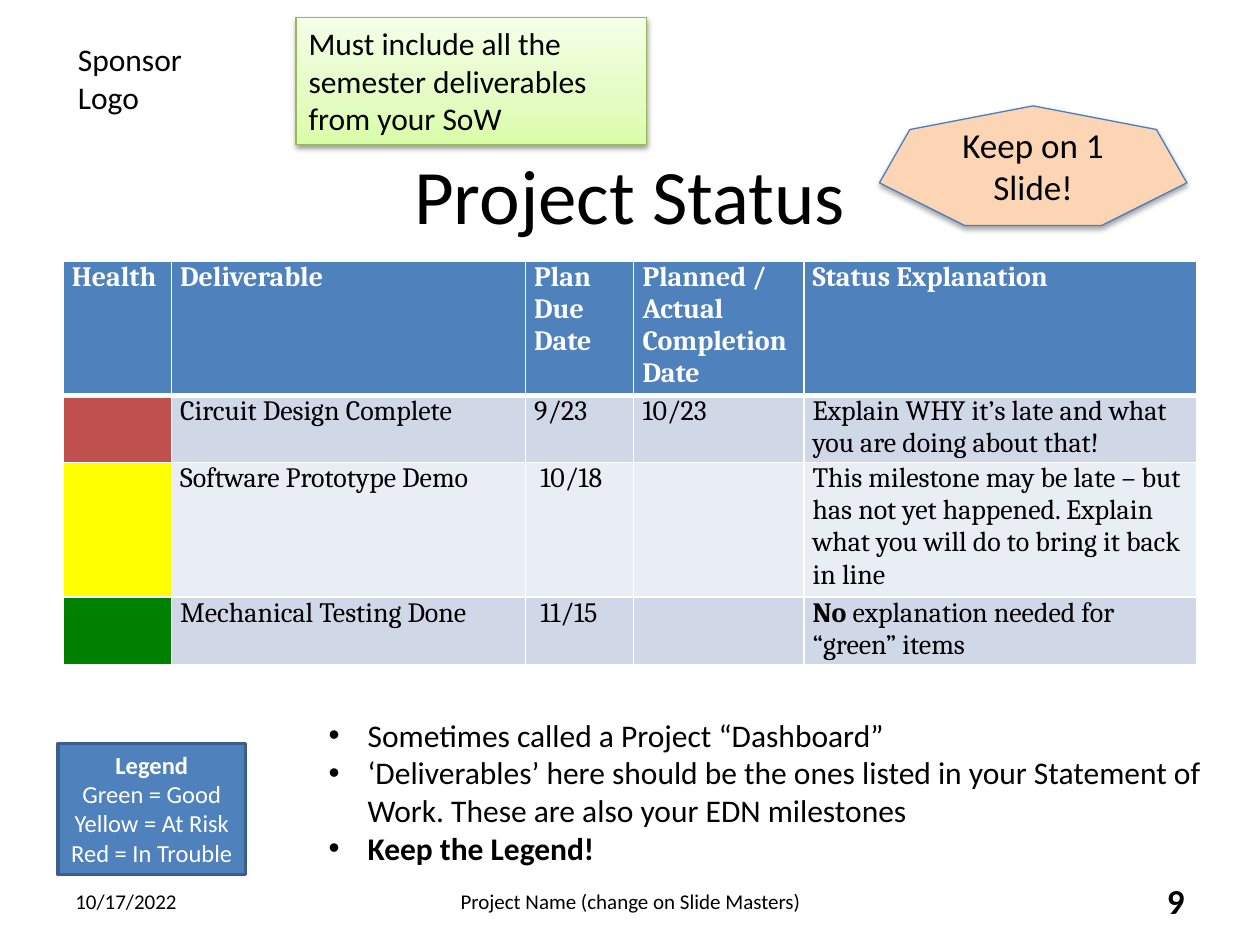
from copy import deepcopy
from dataclasses import dataclass
from typing import NamedTuple

from lxml import etree
from pptx import Presentation
from pptx.dml.color import RGBColor
from pptx.enum.shapes import MSO_SHAPE
from pptx.enum.text import MSO_ANCHOR, PP_ALIGN
from pptx.oxml.ns import qn
from pptx.util import Inches, Pt

LEFT, CENTER, RIGHT = PP_ALIGN.LEFT, PP_ALIGN.CENTER, PP_ALIGN.RIGHT
TOP, MIDDLE = MSO_ANCHOR.TOP, MSO_ANCHOR.MIDDLE
RECTANGLE, HEPTAGON = MSO_SHAPE.RECTANGLE, MSO_SHAPE.HEPTAGON


@dataclass(frozen=True)
class Theme:
    body_font: str = "Calibri"
    table_font: str = "Cambria"
    black: str = "000000"
    white: str = "FFFFFF"
    blue: str = "4F81BD"
    legend_edge: str = "3A5F8C"
    red: str = "C0504D"
    yellow: str = "FFFF00"
    green: str = "008000"
    bands: tuple = ("D0D8E8", "E9EDF4")
    peach: str = "FCD5B5"
    peach_edge: str = "4B7EBC"
    lime: tuple = ((0, "DAFDA7"), (0.35, "E4FCC2"), (1, "F5FFE7"))
    lime_edge: str = "98B955"
    title_size: int = 44
    callout_size: int = 20
    note_size: int = 18
    table_size: int = 16
    legend_size: int = 14
    footer_size: int = 12


THEME = Theme()


class Span(NamedTuple):
    text: str
    bold: bool = False


class Box(NamedTuple):
    left: float
    top: float
    width: float
    height: float

    def emu(self) -> tuple:
        return tuple(Inches(length) for length in self)


class Milestone(NamedTuple):
    health: str
    deliverable: str
    due: str
    completion: str
    explanation: object


HEADINGS = (
    ["Health"],
    ["Deliverable"],
    ["Plan", "Due", "Date"],
    ["Planned / Actual", "Completion", "Date"],
    ["Status Explanation"],
)
MILESTONES = (
    Milestone(THEME.red, "Circuit Design Complete", "9/23", "10/23",
              "Explain WHY it’s late and what you are doing about that!"),
    Milestone(THEME.yellow, "Software Prototype Demo", " 10/18", "",
              "This milestone may be late – but has not yet happened. "
              "Explain what you will do to bring it back in line"),
    Milestone(THEME.green, "Mechanical Testing Done", " 11/15", "",
              [Span("No", True), Span(" explanation needed for “green” items")]),
)
COLUMN_WIDTHS = (0.86, 2.81, 0.86, 1.35, 3.12)
ROW_HEIGHTS = (1.06, 0.53, 1.07, 0.54)


def write(frame, lines, *, size=THEME.note_size, font=THEME.body_font,
          color=THEME.black, bold=False, align=LEFT, bullet=False) -> None:
    for index, line in enumerate(lines):
        paragraph = frame.add_paragraph() if index else frame.paragraphs[0]
        paragraph.alignment = align
        if bullet:
            properties = paragraph._p.get_or_add_pPr()
            properties.set("marL", str(Inches(0.31)))
            properties.set("indent", str(Inches(-0.31)))
            etree.SubElement(properties, qn("a:buFont"), typeface="Arial")
            etree.SubElement(properties, qn("a:buChar"), char="•")
        for span in [Span(line, bold)] if isinstance(line, str) else line:
            for piece_index, piece in enumerate(span.text.split("\n")):
                if piece_index:
                    paragraph.add_line_break()
                run = paragraph.add_run()
                run.text = piece
                run.font.name = font
                run.font.size = Pt(size)
                run.font.bold = span.bold
                run.font.color.rgb = RGBColor.from_string(color)


def add_text(slide, box: Box, lines, *, anchor=TOP, **text_format) -> None:
    frame = slide.shapes.add_textbox(*box.emu()).text_frame
    frame.word_wrap = True
    frame.vertical_anchor = anchor
    write(frame, lines, **text_format)


def add_panel(slide, kind, box: Box, lines, *, edge: str, edge_width: float,
              fill: str = "", gradient=(), shadow=None, anchor=TOP,
              wrap=True, **text_format) -> None:
    panel = slide.shapes.add_shape(kind, *box.emu())
    if gradient:
        panel.fill.gradient()
        panel.fill.gradient_angle = 90
        stop_list = panel._element.spPr.find(f".//{qn('a:gsLst')}")
        stop_list.append(deepcopy(stop_list[-1]))
        for stop, (position, color) in zip(panel.fill.gradient_stops, gradient):
            stop.position = position
            stop.color.rgb = RGBColor.from_string(color)
    else:
        panel.fill.solid()
        panel.fill.fore_color.rgb = RGBColor.from_string(fill)
    panel.line.color.rgb = RGBColor.from_string(edge)
    panel.line.width = Pt(edge_width)
    panel.shadow.inherit = False
    if shadow:
        opacity, distance = shadow
        effects = panel._element.spPr.find(qn("a:effectLst"))
        outer = etree.SubElement(
            effects, qn("a:outerShdw"), blurRad=str(Pt(3.1)),
            dist=str(Pt(distance)), dir="5400000", rotWithShape="0")
        tone = etree.SubElement(outer, qn("a:srgbClr"), val=THEME.black)
        etree.SubElement(tone, qn("a:alpha"), val=str(opacity * 1000))
    frame = panel.text_frame
    frame.word_wrap = wrap
    frame.vertical_anchor = anchor
    write(frame, lines, **text_format)


def set_borders(cell, *, top: float = 1, bottom: float = 1) -> None:
    properties = cell._tc.get_or_add_tcPr()
    widths = {"a:lnL": 1, "a:lnR": 1, "a:lnT": top, "a:lnB": bottom}
    for position, (tag, width) in enumerate(widths.items()):
        border = etree.Element(qn(tag), w=str(Pt(width)))
        solid = etree.SubElement(border, qn("a:solidFill"))
        etree.SubElement(solid, qn("a:srgbClr"), val=THEME.white)
        properties.insert(position, border)


def fill_cell(cell, lines, background: str, **text_format) -> None:
    cell.margin_left = cell.margin_right = Inches(0.07)
    cell.margin_top = cell.margin_bottom = 0
    cell.fill.solid()
    cell.fill.fore_color.rgb = RGBColor.from_string(background)
    if any(lines):
        write(cell.text_frame, lines, size=THEME.table_size,
              font=THEME.table_font, **text_format)


def add_status_table(slide, box: Box) -> None:
    table = slide.shapes.add_table(
        len(ROW_HEIGHTS), len(COLUMN_WIDTHS), *box.emu()).table
    for column, width in zip(table.columns, COLUMN_WIDTHS):
        column.width = Inches(width)
    for row, height in zip(table.rows, ROW_HEIGHTS):
        row.height = Inches(height)
    for column, heading in enumerate(HEADINGS):
        cell = table.cell(0, column)
        fill_cell(cell, heading, THEME.blue, color=THEME.white, bold=True)
        set_borders(cell, bottom=3)
    for row, milestone in enumerate(MILESTONES, start=1):
        band = THEME.bands[(row - 1) % 2]
        for column, entry in enumerate(milestone):
            cell = table.cell(row, column)
            if column:
                fill_cell(cell, [entry], band)
            else:
                fill_cell(cell, [], milestone.health)
            set_borders(cell, top=3 if row == 1 else 1)


def main() -> None:
    deck = Presentation()
    deck.slide_width, deck.slide_height = Inches(10), Inches(7.5)
    slide = deck.slides.add_slide(deck.slide_layouts[6])

    add_text(slide, Box(0.52, 0.27, 1.53, 0.71), ["Sponsor\nLogo"])
    add_status_table(slide, Box(0.5, 2.07, 9, 3.2))
    add_text(slide, Box(0.5, 1.12, 9, 0.82), ["Project Status"],
             size=THEME.title_size, align=CENTER)
    add_text(slide, Box(0.5, 6.95, 2.33, 0.4), ["10/17/2022"],
             size=THEME.footer_size, anchor=MIDDLE)
    add_text(slide, Box(3.42, 6.95, 3.17, 0.4),
             ["Project Name (change on Slide Masters)"],
             size=THEME.footer_size, align=CENTER, anchor=MIDDLE)
    add_text(slide, Box(7.17, 6.95, 2.33, 0.4), ["9"],
             size=THEME.callout_size, bold=True, align=RIGHT, anchor=MIDDLE)
    add_panel(slide, RECTANGLE, Box(0.46, 5.9, 1.49, 1.04),
              [[Span("Legend", True)], "Green = Good", "Yellow = At Risk",
               "Red = In Trouble"],
              fill=THEME.blue, edge=THEME.legend_edge, edge_width=2, wrap=False,
              size=THEME.legend_size, color=THEME.white, align=CENTER)
    add_text(slide, Box(2.51, 5.63, 7.33, 1.31),
             ["Sometimes called a Project “Dashboard”",
              "‘Deliverables’ here should be the ones listed in your "
              "Statement of Work. These are also your EDN milestones",
              [Span("Keep the Legend!", True)]], bullet=True)
    add_panel(slide, HEPTAGON, Box(6.98, 0.84, 2.44, 0.95), ["Keep on 1 Slide!"],
              fill=THEME.peach, edge=THEME.peach_edge, edge_width=0.75,
              shadow=(35, 1.8), anchor=MIDDLE,
              size=THEME.callout_size, align=CENTER)
    add_panel(slide, RECTANGLE, Box(2.35, 0.14, 2.78, 1.01),
              ["Must include all the semester deliverables from your SoW"],
              gradient=THEME.lime, edge=THEME.lime_edge, edge_width=0.75,
              shadow=(38, 1.6))
    deck.save("out.pptx")


if __name__ == "__main__":
    main()
